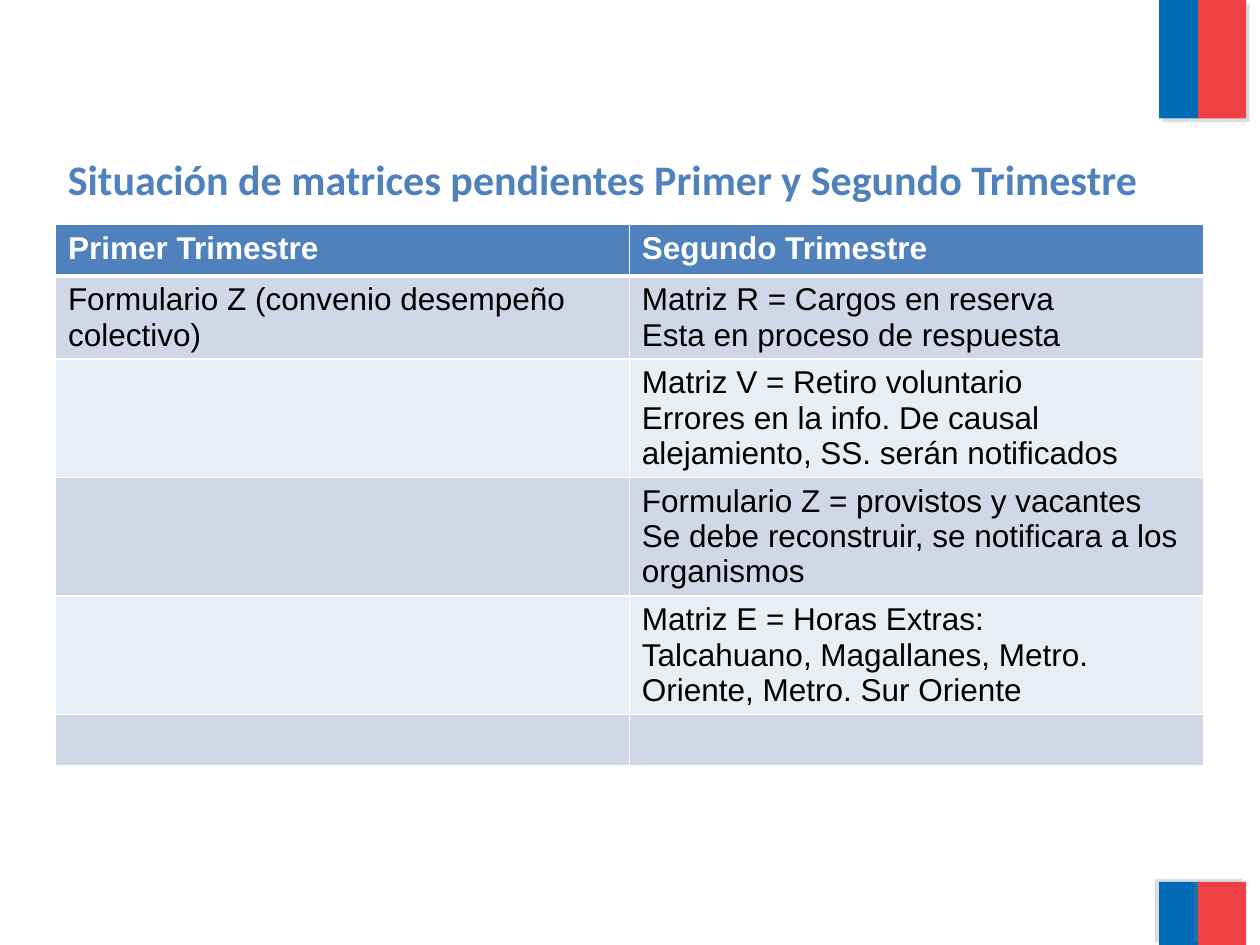
from lxml import etree
from pptx import Presentation
from pptx import util as u
from pptx.dml.color import RGBColor
from pptx.enum import shapes
from pptx.oxml import ns

BLUE, RED = "006CB7", "EF4144"
HEADER, BAND_DARK, BAND_LIGHT = "4F81BD", "D0D8E8", "E9EDF4"
WHITE, BLACK, SHADOW = "FFFFFF", "000000", "808080"

ROWS = [
    ("Primer Trimestre", "Segundo Trimestre"),
    ("Formulario Z (convenio desempeño colectivo)",
     "Matriz R = Cargos en reserva\nEsta en proceso de respuesta"),
    ("", "Matriz V = Retiro voluntario\n"
         "Errores en la info. De causal alejamiento, SS. serán notificados"),
    ("", "Formulario Z = provistos y vacantes\n"
         "Se debe reconstruir, se notificara a los organismos"),
    ("", "Matriz E = Horas Extras:\n"
         "Talcahuano, Magallanes, Metro. Oriente, Metro. Sur Oriente"),
    ("", ""),
]


def color(hex_value):
    return RGBColor.from_string(hex_value)


def add_element(parent, tag, **attributes):
    element = etree.SubElement(parent, ns.qn(tag))
    for name, value in attributes.items():
        element.set(name, str(value))
    return element


class SlideBuilder:
    def __init__(self, slide):
        self.slide = slide
        self.table_font = "Arial"
        self.title_font = "Calibri"

    def format_text(self, text_frame, font_name, size, hex_value, bold):
        for paragraph in text_frame.paragraphs:
            for run in paragraph.runs:
                run.font.name = font_name
                run.font.size = u.Pt(size)
                run.font.bold = bold
                run.font.color.rgb = color(hex_value)

    def bar(self, left, top, width, height, fill, shadow_angle):
        shape = self.slide.shapes.add_shape(
            shapes.MSO_SHAPE.RECTANGLE, u.Inches(left), u.Inches(top),
            u.Inches(width), u.Inches(height))
        shape.fill.solid()
        shape.fill.fore_color.rgb = color(fill)
        shape.line.fill.background()
        shape.shadow.inherit = False
        effects = shape.element.spPr.find(ns.qn("a:effectLst"))
        shadow = add_element(effects, "a:outerShdw", dist=u.Pt(3),
                             dir=shadow_angle * 60000, rotWithShape=0)
        shadow_color = add_element(shadow, "a:srgbClr", val=SHADOW)
        add_element(shadow_color, "a:alpha", val=25000)

    def title(self, left, top, width, height, words):
        box = self.slide.shapes.add_textbox(
            u.Inches(left), u.Inches(top), u.Inches(width), u.Inches(height))
        box.text_frame.word_wrap = True
        box.text_frame.text = words
        self.format_text(box.text_frame, self.title_font, 24, HEADER, True)

    def borders(self, cell, top, bottom):
        """Draw white cell borders; top and bottom are widths in points."""
        properties = cell._tc.get_or_add_tcPr()
        for tag, width in (("a:lnL", 1), ("a:lnR", 1),
                           ("a:lnT", top), ("a:lnB", bottom)):
            line = add_element(properties, tag, w=u.Pt(width))
            fill = add_element(line, "a:solidFill")
            add_element(fill, "a:srgbClr", val=WHITE)

    def table(self, left, top, width, row_height, rows):
        table = self.slide.shapes.add_table(
            len(rows), len(rows[0]), u.Inches(left), u.Inches(top),
            u.Inches(width), u.Inches(row_height * len(rows))).table
        for row_index, row in enumerate(rows):
            is_header = row_index == 0
            band = BAND_DARK if row_index % 2 else BAND_LIGHT
            for column_index, words in enumerate(row):
                cell = table.cell(row_index, column_index)
                self.borders(cell, top=3 if row_index == 1 else 1,
                             bottom=3 if is_header else 1)
                cell.fill.solid()
                cell.fill.fore_color.rgb = color(HEADER if is_header else band)
                cell.text_frame.text = words
                self.format_text(cell.text_frame, self.table_font, 18,
                                 WHITE if is_header else BLACK, is_header)


def main():
    presentation = Presentation()
    presentation.slide_width = u.Inches(10)
    presentation.slide_height = u.Inches(7.5)
    builder = SlideBuilder(
        presentation.slides.add_slide(presentation.slide_layouts[6]))

    for top, height, shadow_angle in ((0, 0.94, 45), (7, 0.5, 215)):
        builder.bar(9.2, top, 0.31, height, BLUE, shadow_angle)
        builder.bar(9.51, top, 0.38, height, RED, shadow_angle)
    builder.table(0.44, 1.78, 9.11, 0.41, ROWS)
    builder.title(0.44, 1.17, 9.11, 0.82,
                  "Situación de matrices pendientes Primer y Segundo Trimestre")
    presentation.save("out.pptx")


if __name__ == "__main__":
    main()
